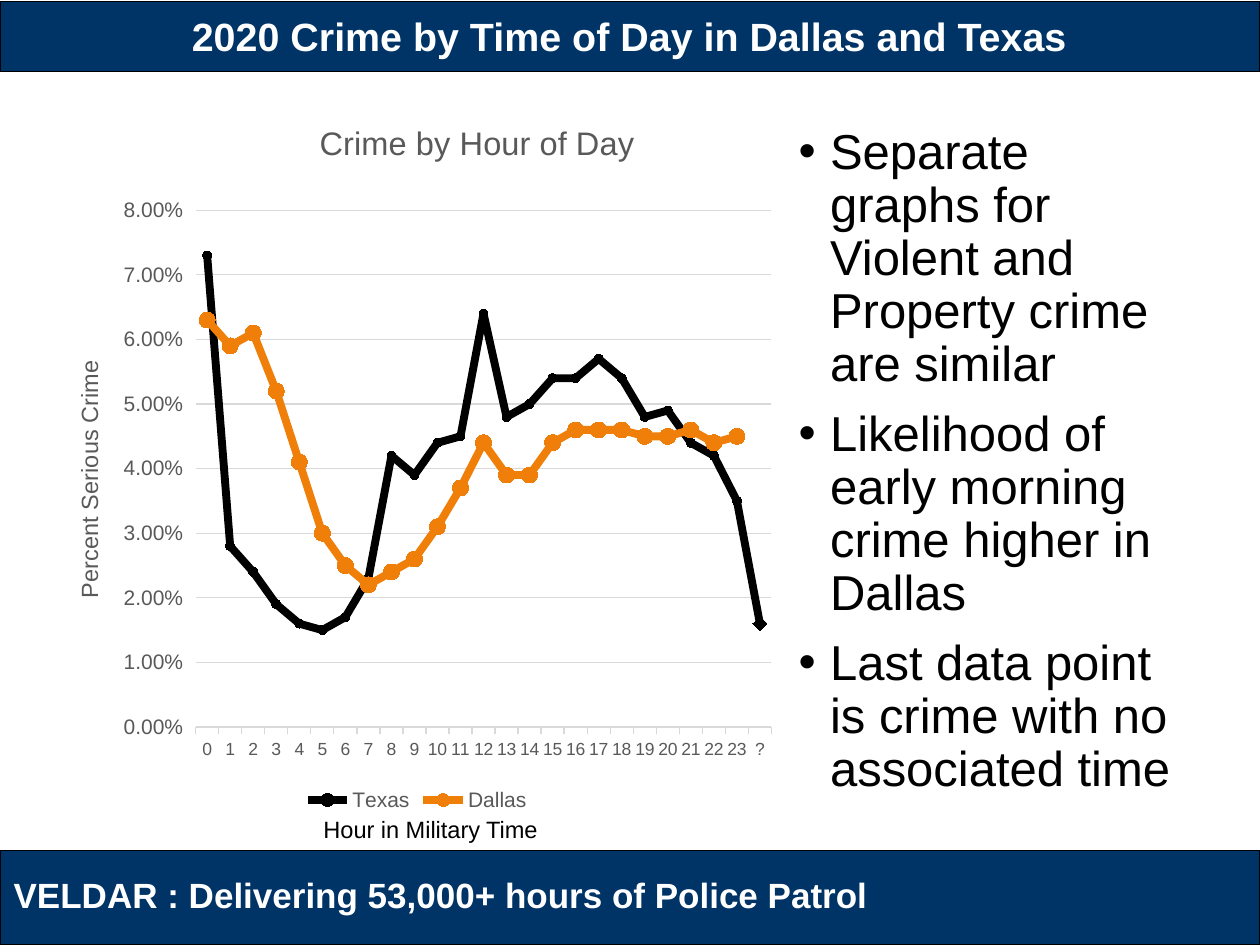
from lxml.etree import SubElement
from pptx import Presentation
from pptx.chart.data import CategoryChartData
from pptx.dml.color import RGBColor
from pptx.enum.chart import XL_CHART_TYPE as ChartType
from pptx.enum.chart import XL_LEGEND_POSITION as LegendPosition
from pptx.enum.chart import XL_MARKER_STYLE as Marker
from pptx.enum.chart import XL_TICK_MARK as Tick
from pptx.enum.shapes import MSO_SHAPE as Shape
from pptx.enum.text import MSO_ANCHOR as Anchor
from pptx.enum.text import PP_ALIGN as Align
from pptx.oxml.ns import qn
from pptx.util import Pt

FONT = "Arial"
NAVY, BLACK, WHITE, GRAY, GRID = "003366", "000000", "FFFFFF", "595959", "D9D9D9"
WIDTH, HEIGHT = 720, 540

BANDS = [(0, 0.7, WIDTH, 40.3), (0, 486, WIDTH, 54)]
TITLE = "2020 Crime by Time of Day in Dallas and Texas"
AXIS_NOTE = "Hour in Military Time"
FOOTER = "VELDAR : Delivering 53,000+ hours of Police Patrol"
BULLETS = [
    "Separate graphs for Violent and Property crime are similar",
    "Likelihood of early morning crime higher in Dallas",
    "Last data point is crime with no associated time",
]

CHART_BOX = (27.4, 61.9, 421.9, 404.6)
CHART_TITLE = "Crime by Hour of Day"
VALUE_TITLE = "Percent Serious Crime"
HOURS = [str(hour) for hour in range(24)] + ["?"]
# name, colour, marker size, percent of crime in each hour
SERIES = [
    ("Texas", BLACK, 5,
     [7.3, 2.8, 2.4, 1.9, 1.6, 1.5, 1.7, 2.3, 4.2, 3.9, 4.4, 4.5, 6.4,
      4.8, 5.0, 5.4, 5.4, 5.7, 5.4, 4.8, 4.9, 4.4, 4.2, 3.5, 1.6]),
    ("Dallas", "F07F09", 9,
     [6.3, 5.9, 6.1, 5.2, 4.1, 3.0, 2.5, 2.2, 2.4, 2.6, 3.1, 3.7, 4.4,
      3.9, 3.9, 4.4, 4.6, 4.6, 4.6, 4.5, 4.5, 4.6, 4.4, 4.5, None]),
]


def color(value):
    return RGBColor.from_string(value)


def set_font(font, size, hex_color, bold=False):
    for name, value in {"name": FONT, "size": Pt(size), "bold": bold}.items():
        setattr(font, name, value)
    font.color.rgb = color(hex_color)


def set_fill(fill, hex_color):
    fill.solid()
    fill.fore_color.rgb = color(hex_color)


def set_line(line, hex_color, width):
    set_fill(line.fill, hex_color)
    line.width = Pt(width)


def add_band(slide, box):
    shape = slide.shapes.add_shape(Shape.RECTANGLE, *map(Pt, box))
    shape.shadow.inherit = False
    set_fill(shape.fill, NAVY)
    set_line(shape.line, BLACK, 0.75)


def add_text(slide, box, lines, size, hex_color, bold=False, wrap=False,
             anchor=Anchor.TOP, **paragraph_format):
    frame = slide.shapes.add_textbox(*map(Pt, box)).text_frame
    frame.word_wrap = wrap
    frame.vertical_anchor = anchor
    frame.text = "\n".join(lines)
    for paragraph in frame.paragraphs:
        for name, value in paragraph_format.items():
            setattr(paragraph, name, value)
        set_font(paragraph.runs[0].font, size, hex_color, bold)
    return frame


def add_bullets(frame, indent):
    for paragraph in frame.paragraphs:
        properties = paragraph._p.get_or_add_pPr()
        properties.set("marL", str(Pt(indent)))
        properties.set("indent", str(-Pt(indent)))
        SubElement(properties, qn("a:buFont")).set("typeface", FONT)
        SubElement(properties, qn("a:buChar")).set("char", "•")


def place(element, index, inner=False, **fractions):
    """Give a chart part a fixed place, as fractions of the chart."""
    for old in element.findall(qn("c:layout")):
        element.remove(old)
    layout = SubElement(element, qn("c:layout"))
    element.insert(index, layout)
    manual = SubElement(layout, qn("c:manualLayout"))
    settings = {"layoutTarget": "inner"} if inner else {}
    settings.update(xMode="edge", yMode="edge", **fractions)
    for name, value in settings.items():
        SubElement(manual, qn("c:" + name)).set("val", str(value))


def add_title(owner, text, size, x, y):
    owner.has_title = True
    title = owner.chart_title if hasattr(owner, "chart_title") else owner.axis_title
    title.text_frame.text = text
    set_font(title.text_frame.paragraphs[0].runs[0].font, size, GRAY)
    place(title._element, 1, x=x, y=y)


def style_marker(marker, style, size, hex_color):
    marker.style, marker.size = style, size
    set_fill(marker.format.fill, hex_color)
    set_line(marker.format.line, hex_color, 0.75)


def add_line_chart(slide):
    data = CategoryChartData(number_format="0.00%")
    data.categories = HOURS
    for name, _, _, percents in SERIES:
        data.add_series(name, [None if p is None else round(p / 100, 3) for p in percents])
    chart = slide.shapes.add_chart(ChartType.LINE_MARKERS, *map(Pt, CHART_BOX), data).chart
    set_font(chart.font, 10, BLACK)
    chart.plots[0].vary_by_categories = False

    for series, (_, hex_color, size, _) in zip(chart.plots[0].series, SERIES):
        series.smooth = False
        set_line(series.format.line, hex_color, 4.5)
        style_marker(series.marker, Marker.CIRCLE, size, hex_color)
    unknown_hour = chart.plots[0].series[0].points[len(HOURS) - 1]
    set_line(unknown_hour.format.line, BLACK, 4.5)
    style_marker(unknown_hour.marker, Marker.DIAMOND, 8, BLACK)

    hours, values = chart.category_axis, chart.value_axis
    set_font(hours.tick_labels.font, 10, GRAY)
    set_line(hours.format.line, GRID, 0.75)
    set_font(values.tick_labels.font, 12, GRAY)
    values.format.line.fill.background()
    set_line(values.major_gridlines.format.line, GRID, 0.75)
    for name, value in {"minimum_scale": 0, "maximum_scale": 0.08, "major_unit": 0.01}.items():
        setattr(values, name, value)
    for axis in (hours, values):
        axis.major_tick_mark = Tick.OUTSIDE
    values.tick_labels.number_format = "0.00%"
    values.tick_labels.number_format_is_linked = False

    chart.has_legend = True
    chart.legend.position = LegendPosition.BOTTOM
    chart.legend.include_in_layout = False
    set_font(chart.legend.font, 12, GRAY)

    add_title(chart, CHART_TITLE, 18.6, x=0.36, y=0.01)
    chart.chart_title.include_in_layout = True
    add_title(values, VALUE_TITLE, 13.4, x=0.03, y=0.35)
    plot_area = chart._chartSpace.chart.plotArea
    place(plot_area, 0, inner=True, x=0.2, y=0.144, w=0.78, h=0.73)


def main():
    presentation = Presentation()
    presentation.slide_width, presentation.slide_height = Pt(WIDTH), Pt(HEIGHT)
    slide = presentation.slides.add_slide(presentation.slide_layouts[6])
    for band in BANDS:
        add_band(slide, band)
    add_line_chart(slide)
    add_text(slide, (0, 0.7, WIDTH, 42.5), [TITLE], 22.5, WHITE, bold=True, wrap=True,
             anchor=Anchor.MIDDLE, alignment=Align.CENTER, line_spacing=0.9)
    add_text(slide, (177.8, 462.2, 139, 23.8), [AXIS_NOTE], 13.5, BLACK)
    body = add_text(slide, (449.3, 69.1, 235.4, 356.4), BULLETS, 28, BLACK, wrap=True,
                    line_spacing=0.9, space_before=Pt(10))
    add_bullets(body, 18)
    add_text(slide, (0.7, 495.4, 509, 31.7), [FOOTER], 20, WHITE, bold=True)
    presentation.save("out.pptx")


if __name__ == "__main__":
    main()
